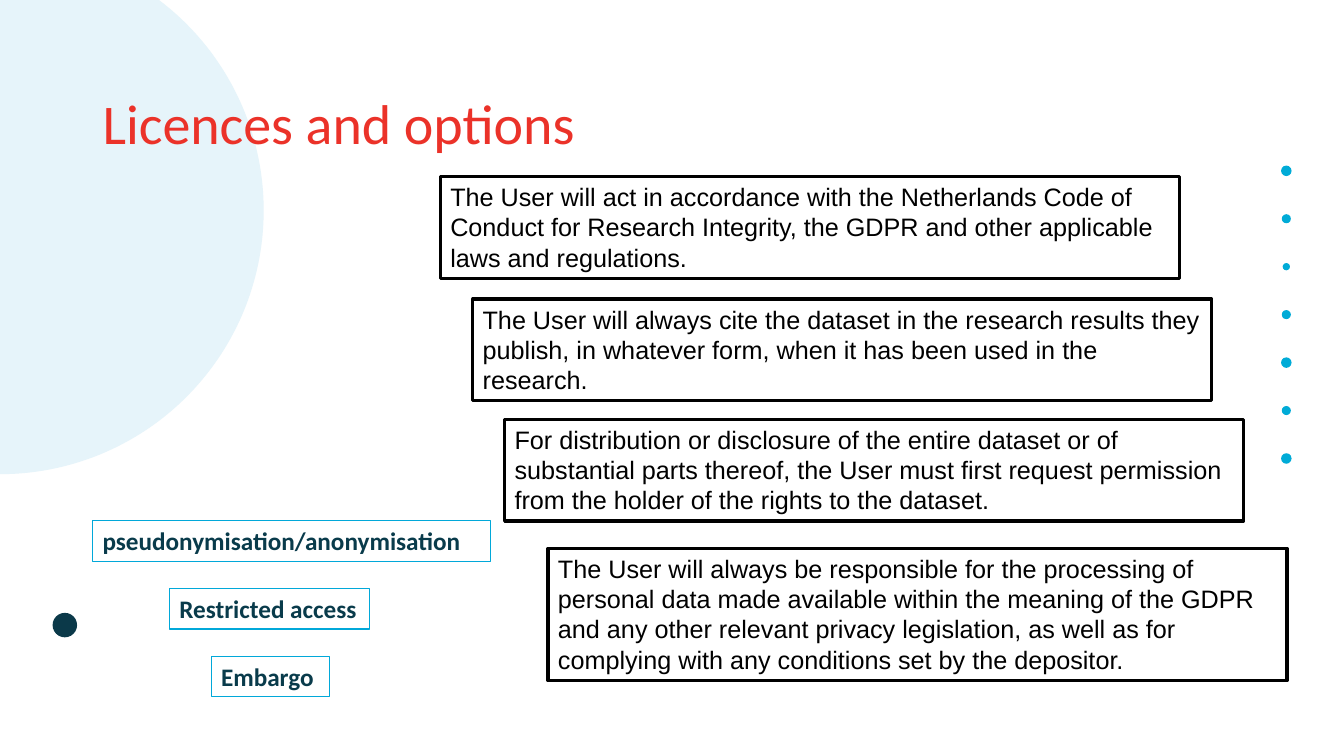
from dataclasses import dataclass
from math import asin, cos, pi, sin

from pptx import Presentation
from pptx.dml.color import RGBColor
from pptx.enum.shapes import MSO_SHAPE
from pptx.enum.text import MSO_ANCHOR, MSO_AUTO_SIZE, PP_ALIGN
from pptx.util import Pt


@dataclass(frozen=True)
class Theme:
    white: str = "FFFFFF"
    black: str = "000000"
    red: str = "EB3229"
    navy: str = "093B4B"
    dark_dot: str = "0B3949"
    bright_dot: str = "00ABD7"
    label_border: str = "01A8D9"
    pale_blue: str = "E6F4FA"
    heading_font: str = "Calibri"
    body_font: str = "Arial"
    title_size: float = 40
    body_size: float = 18
    thick_line: float = 2.25
    thin_line: float = 0.75


THEME = Theme()

CONDITIONS = [
    (314.6, 126, 72.7, "The User will act in accordance with the Netherlands Code of Conduct for Research Integrity, the GDPR and other applicable laws and regulations."),
    (337.7, 213.6, 72.7, "The User will always cite the dataset in the research results they publish, in whatever form, when it has been used in the research."),
    (360.5, 299.5, 72.7, "For distribution or disclosure of the entire dataset or of substantial parts thereof, the User must first request permission from the holder of the rights to the dataset."),
    (391.5, 391.7, 94.5, "The User will always be responsible for the processing of personal data made available within the meaning of the GDPR and any other relevant privacy legislation, as well as for complying with any conditions set by the depositor."),
]
CONDITION_WIDTH = 527.8

OPTIONS = [
    (66.2, 284.4, "pseudonymisation/anonymisation"),
    (121, 143.3, "Restricted access"),
    (150.8, 84.3, "Embargo"),
]
OPTION_TOP, OPTION_STEP, OPTION_HEIGHT = 371.7, 48.5, 29.1

DOT_DIAMETERS = [7.5, 6.5, 5.2, 6.5, 7.5, 6.5, 7.5]
DOT_CENTRE_X, DOT_FIRST_Y, DOT_STEP = 918.8, 122, 34.25

ARC_CENTRE_Y, ARC_RADIUS, ARC_STEPS = 150.3, 188.4, 120


def fill_plain(shape, color):
    shape.shadow.inherit = False
    shape.fill.solid()
    shape.fill.fore_color.rgb = RGBColor.from_string(color)
    shape.line.fill.background()


def add_background_arc(slide):
    start = -asin(ARC_CENTRE_Y / ARC_RADIUS)
    angles = [start + (pi / 2 - start) * step / ARC_STEPS for step in range(ARC_STEPS + 1)]
    points = [
        (Pt(ARC_RADIUS * cos(angle)), Pt(max(0, ARC_CENTRE_Y + ARC_RADIUS * sin(angle))))
        for angle in angles
    ]
    builder = slide.shapes.build_freeform(0, 0)
    builder.add_line_segments(points, close=True)
    fill_plain(builder.convert_to_shape(), THEME.pale_blue)


def add_dot(slide, centre_x, centre_y, diameter, color):
    dot = slide.shapes.add_shape(
        MSO_SHAPE.OVAL, Pt(centre_x - diameter / 2), Pt(centre_y - diameter / 2), Pt(diameter), Pt(diameter)
    )
    fill_plain(dot, color)


def write_text(shape, text, font_name, size, color, bold=False):
    text_frame = shape.text_frame
    text_frame.word_wrap = True
    text_frame.text = text
    paragraph = text_frame.paragraphs[0]
    paragraph.alignment = PP_ALIGN.LEFT
    font = paragraph.runs[0].font
    font.name = font_name
    font.size = Pt(size)
    font.bold = bold
    font.color.rgb = RGBColor.from_string(color)
    return paragraph


def add_title(slide, text):
    title = slide.shapes.add_textbox(Pt(66.2), Pt(38.2), Pt(828), Pt(104.4))
    paragraph = write_text(title, text, THEME.heading_font, THEME.title_size, THEME.red)
    paragraph.line_spacing = 0.9
    title.text_frame.vertical_anchor = MSO_ANCHOR.MIDDLE


def add_framed_box(slide, left, top, width, height, border, line_width):
    box = slide.shapes.add_shape(MSO_SHAPE.RECTANGLE, Pt(left), Pt(top), Pt(width), Pt(height))
    fill_plain(box, THEME.white)
    box.line.color.rgb = RGBColor.from_string(border)
    box.line.width = Pt(line_width)
    box.text_frame.vertical_anchor = MSO_ANCHOR.TOP
    box.text_frame.auto_size = MSO_AUTO_SIZE.SHAPE_TO_FIT_TEXT
    return box


def add_condition(slide, left, top, height, text):
    box = add_framed_box(slide, left, top, CONDITION_WIDTH, height, THEME.black, THEME.thick_line)
    write_text(box, text, THEME.body_font, THEME.body_size, THEME.black)


def add_option(slide, left, top, width, text):
    box = add_framed_box(slide, left, top, width, OPTION_HEIGHT, THEME.label_border, THEME.thin_line)
    write_text(box, text, THEME.heading_font, THEME.body_size, THEME.navy, bold=True)


def main():
    presentation = Presentation()
    presentation.slide_width = Pt(960)
    presentation.slide_height = Pt(540)
    slide = presentation.slides.add_slide(presentation.slide_layouts[6])

    add_background_arc(slide)
    add_dot(slide, 46.3, 446.5, 17.5, THEME.dark_dot)
    for index, diameter in enumerate(DOT_DIAMETERS):
        add_dot(slide, DOT_CENTRE_X, DOT_FIRST_Y + index * DOT_STEP, diameter, THEME.bright_dot)

    add_title(slide, "Licences and options")
    for left, top, height, text in CONDITIONS:
        add_condition(slide, left, top, height, text)
    for index, (left, width, text) in enumerate(OPTIONS):
        add_option(slide, left, OPTION_TOP + index * OPTION_STEP, width, text)

    presentation.save("out.pptx")


if __name__ == "__main__":
    main()
